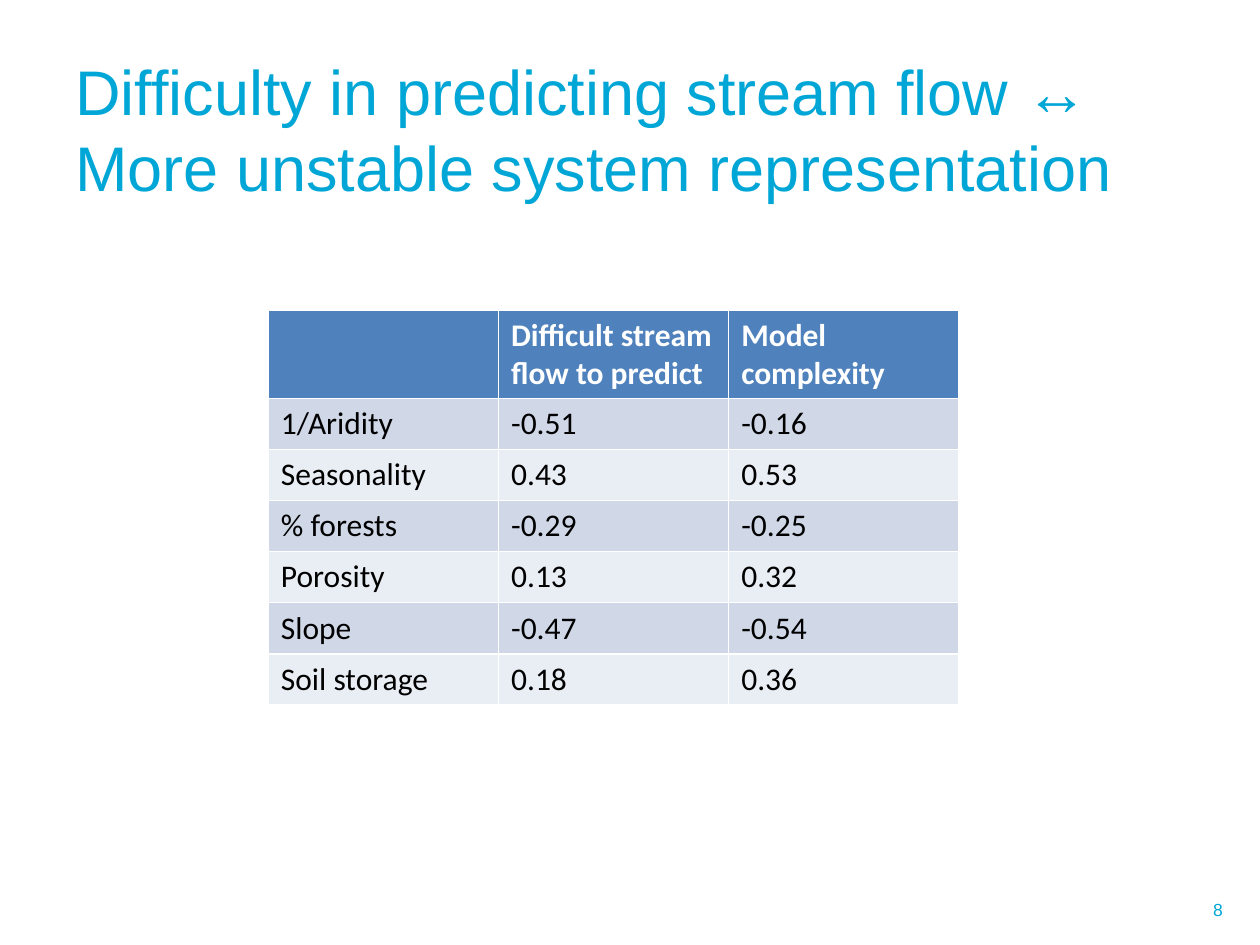
"""Build a slide with a table of catchment traits against flow difficulty and model complexity."""
from pptx import Presentation
from pptx.dml.color import RGBColor
from pptx.enum.text import MSO_ANCHOR, PP_ALIGN
from pptx.util import Cm, Pt

MIDDLE = MSO_ANCHOR.MIDDLE
LEFT, RIGHT = PP_ALIGN.LEFT, PP_ALIGN.RIGHT
CYAN = RGBColor(0x00, 0xA6, 0xD6)
BLUE = RGBColor(0x4F, 0x81, 0xBD)
PALE = RGBColor(0xE9, 0xED, 0xF4)
MIST = RGBColor(0xD0, 0xD8, 0xE8)
WHITE = RGBColor(0xFF, 0xFF, 0xFF)
BLACK = RGBColor(0x00, 0x00, 0x00)

TITLE = "Difficulty in predicting stream flow ↔ More unstable system representation"
ROWS = [
    ("", "Difficult stream flow to predict", "Model complexity"),
    ("1/Aridity", "-0.51", "-0.16"),
    ("Seasonality", "0.43", "0.53"),
    ("% forests", "-0.29", "-0.25"),
    ("Porosity", "0.13", "0.32"),
    ("Slope", "-0.47", "-0.54"),
    ("Soil storage", "0.18", "0.36"),
]


def style(para, face, size, color, bold=False):
    para.font.name = face
    para.font.size = Pt(size)
    para.font.color.rgb = color
    para.font.bold = bold


deck = Presentation()
deck.slide_width, deck.slide_height = Cm(25.4), Cm(19.05)
slide = deck.slides.add_slide(deck.slide_layouts[6])

labels = [
    ("8", 18.47, 17.83, 6.43, 1.02, 10, RIGHT),
    (TITLE, 1.27, -0.03, 23.22, 5.23, 36, LEFT),
]
for text, left, top, width, height, size, align in labels:
    box = slide.shapes.add_textbox(Cm(left), Cm(top), Cm(width), Cm(height))
    frame = box.text_frame
    frame.word_wrap = True
    frame.vertical_anchor = MIDDLE
    para = frame.paragraphs[0]
    para.text = text
    para.alignment = align
    style(para, "Arial", size, CYAN)

grid = slide.shapes.add_table(
    len(ROWS), len(ROWS[0]), Cm(5.41), Cm(6.25), Cm(13.92), Cm(7.21)
).table
for r, row in enumerate(ROWS):
    head = r == 0
    grid.rows[r].height = Cm(1.78 if head else 1.03)
    for c, text in enumerate(row):
        cell = grid.cell(r, c)
        cell.fill.solid()
        cell.fill.fore_color.rgb = BLUE if head else MIST if r % 2 else PALE
        cell.text = text
        style(cell.text_frame.paragraphs[0], "Calibri", 18, WHITE if head else BLACK, head)

deck.save("out.pptx")
